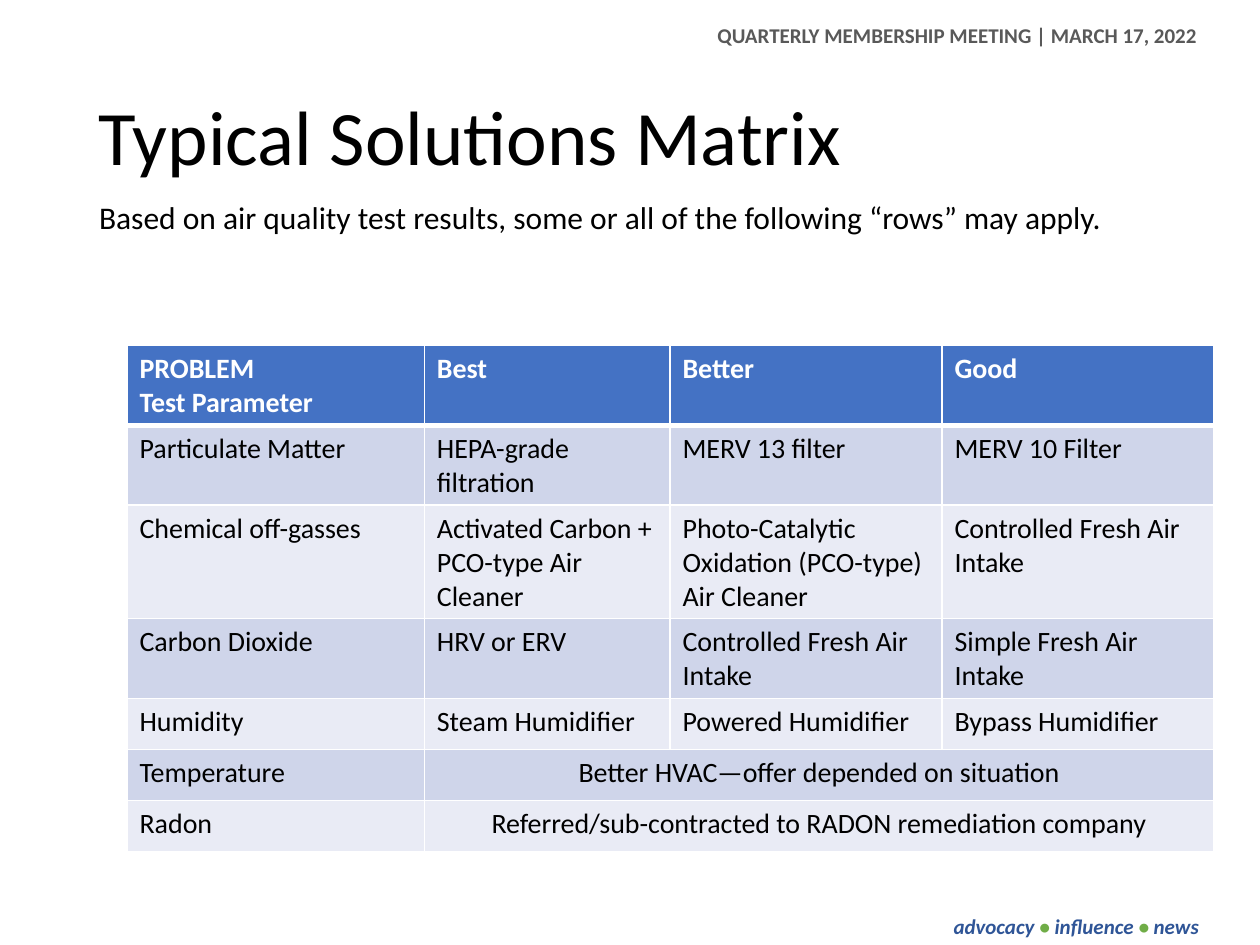
"""Build the Typical Solutions Matrix slide."""
from lxml import etree
from pptx import Presentation
from pptx import util as u
from pptx.dml.color import RGBColor
from pptx.enum import text
from pptx.oxml.ns import qn

ALIGN = text.PP_ALIGN


def write(paragraph, words, size, color="000000", **styles):
    """Add words to a paragraph, with a line break at each newline."""
    for number, line in enumerate(words.split("\n")):
        if number:
            paragraph.add_line_break()
        span = paragraph.add_run()
        span.text = line
        span.font.color.rgb = RGBColor.from_string(color)
        formats = {"name": "Calibri", "size": u.Pt(size), **styles}
        for name, value in formats.items():
            setattr(span.font, name, value)


def add_text(page, place, spans, size, align=ALIGN.LEFT, spacing=1.0, wrap=True, **styles):
    """Add a text box with one paragraph of coloured spans."""
    box = page.shapes.add_textbox(*map(u.Pt, place))
    box.text_frame.word_wrap = wrap
    paragraph = box.text_frame.paragraphs[0]
    for name, value in {"alignment": align, "line_spacing": spacing}.items():
        setattr(paragraph, name, value)
    for words, color in spans:
        write(paragraph, words, size, color, **styles)


deck = Presentation()
deck.slide_width, deck.slide_height = u.Pt(720), u.Pt(540)
page = deck.slides.add_slide(deck.slide_layouts[6])

add_text(page, (360, 9.4, 331.2, 22),
         [("QUARTERLY MEMBERSHIP MEETING | MARCH 17, 2022", "595959")],
         12, align=ALIGN.RIGHT, bold=True)
add_text(page, (537.8, 518.4, 157, 21.6),
         [("advocacy ", "2F5597"), ("•", "70AD47"), (" influence ", "2F5597"),
          ("•", "70AD47"), (" news", "2F5597")],
         12, wrap=False, bold=True, italic=True)
add_text(page, (49.5, 53.3, 621, 79.2), [("Typical Solutions Matrix", "000000")],
         44, spacing=0.9)

rows = [
    ["PROBLEM\nTest Parameter", "Best", "Better", "Good"],
    ["Particulate Matter", "HEPA-grade filtration", "MERV 13 filter", "MERV 10 Filter"],
    ["Chemical off-gasses", "Activated Carbon + PCO-type Air Cleaner",
     "Photo-Catalytic Oxidation (PCO-type) Air Cleaner", "Controlled Fresh Air Intake"],
    ["Carbon Dioxide", "HRV or ERV", "Controlled Fresh Air Intake", "Simple Fresh Air Intake"],
    ["Humidity", "Steam Humidifier", "Powered Humidifier", "Bypass Humidifier"],
    ["Temperature", "Better HVAC—offer depended on situation"],
    ["Radon", "Referred/sub-contracted to RADON remediation company"],
]
widths = [169.9, 140.4, 155.4, 155.4]
row_height = 29.2
matrix = page.shapes.add_table(
    len(rows), len(widths), u.Pt(72.6), u.Pt(197.5),
    u.Pt(sum(widths)), u.Pt(row_height * len(rows))).table
for column, width in zip(matrix.columns, widths):
    column.width = u.Pt(width)

for r, row in enumerate(rows):
    matrix.rows[r].height = u.Pt(row_height)
    header = r == 0
    fill = "4472C4" if header else ("E9EBF5", "CFD5EA")[r % 2]
    for c in range(len(widths)):
        cell = matrix.cell(r, c)
        properties = cell._tc.get_or_add_tcPr()
        for side in "LRTB":
            thick = (header and side == "B") or (r == 1 and side == "T")
            border = etree.SubElement(properties, qn(f"a:ln{side}"), w=str(u.Pt(3 if thick else 1)))
            solid = etree.SubElement(border, qn("a:solidFill"))
            etree.SubElement(solid, qn("a:srgbClr"), val="FFFFFF")
        cell.fill.solid()
        cell.fill.fore_color.rgb = RGBColor.from_string(fill)
    for c, words in enumerate(row):
        paragraph = matrix.cell(r, c).text_frame.paragraphs[0]
        write(paragraph, words, 16, "FFFFFF" if header else "000000", bold=header)
    if len(row) == 2:
        matrix.cell(r, 1).merge(matrix.cell(r, 3))
        paragraph.alignment = ALIGN.CENTER

add_text(page, (49.5, 112.3, 632.2, 47.5),
         [("Based on air quality test results, some or all of the following “rows” may apply.",
           "000000")], 18, spacing=0.9)

deck.save("out.pptx")
